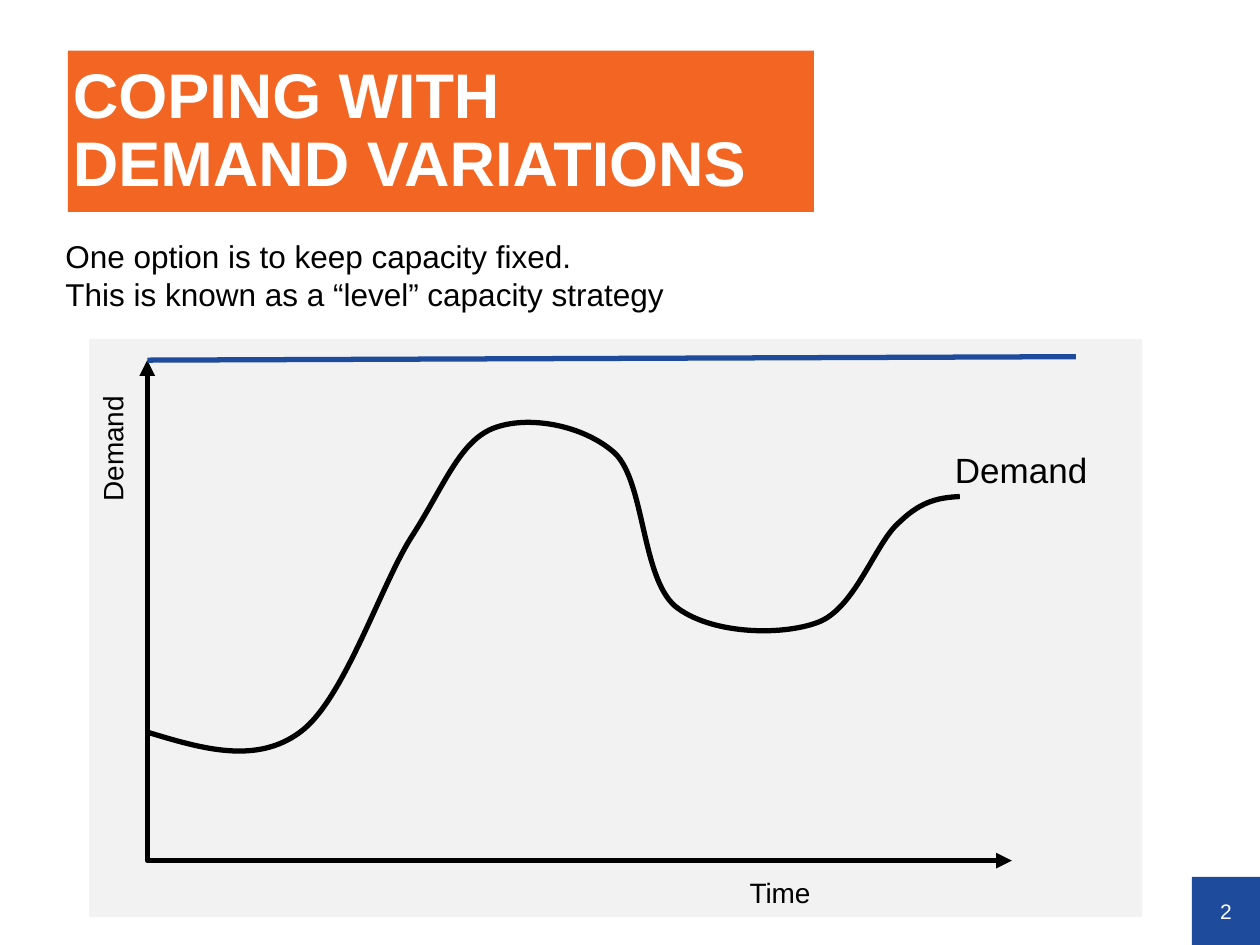
"""Build a slide on coping with demand variations by a level capacity strategy."""
from lxml.etree import SubElement
from pptx import Presentation
from pptx.dml.color import RGBColor
from pptx.enum.shapes import MSO_CONNECTOR, MSO_SHAPE
from pptx.enum.text import MSO_ANCHOR, MSO_AUTO_SIZE, PP_ALIGN
from pptx.oxml.ns import qn
from pptx.util import Cm, Pt

ORANGE = RGBColor(0xF2, 0x65, 0x22)
BLUE = RGBColor(0x1E, 0x4B, 0x9B)
GREY = RGBColor(0xF1, 0xF2, 0xF1)
BLACK = RGBColor(0, 0, 0)
WHITE = RGBColor(0xFF, 0xFF, 0xFF)

TITLE = "COPING WITH\vDEMAND VARIATIONS"
TITLE_BOX = (1.37, 1.02, 15.04, 3.25)
PAGE = "2"
PAGE_BOX = (24.03, 17.68, 1.37, 1.37)
PANEL_BOX = (1.8, 6.83, 21.23, 11.66)

LABELS = [
    ("Demand", (19, 8.92, 4.57, 1.12), 20, 0, True),
    ("Time", (14.86, 17.53, 2.64, 0.94), 16, 0, True),
    ("Demand", (0.81, 8.43, 2.92, 0.94), 16, 270, True),
    ("One option is to keep capacity fixed.\n"
     "This is known as a “level” capacity strategy",
     (1.07, 4.65, 12.7, 1.8), 18, 0, False),
]

AXES = [(2.97, 7.26), (2.97, 17.35), (20.4, 17.35)]
CAPACITY = [(2.97, 7.26), (21.69, 7.19)]
DEMAND = [
    (2.97, 14.76),
    (4.06, 15.09), (5.16, 15.42), (6.05, 14.76),
    (6.93, 14.12), (7.65, 11.86), (8.28, 10.85),
    (8.94, 9.83), (9.25, 8.92), (9.93, 8.64),
    (10.62, 8.36), (11.76, 8.56), (12.4, 9.14),
    (13, 9.73), (12.93, 11.63), (13.61, 12.22),
    (14.3, 12.78), (15.72, 12.83), (16.48, 12.55),
    (17.25, 12.27), (17.65, 10.92), (18.14, 10.52),
    (18.59, 10.08), (18.97, 10.03), (19.35, 10.01),
]


def cm(values):
    return [Cm(value) for value in values]


def write(frame, text, size, color, bold=False, **paragraph_format):
    frame.text = text
    for paragraph in frame.paragraphs:
        for key, value in paragraph_format.items():
            setattr(paragraph, key, value)
        for run in paragraph.runs:
            run.font.color.rgb = color
            for key, value in {"name": "Arial", "size": Pt(size), "bold": bold}.items():
                setattr(run.font, key, value)


def format_frame(frame, insets, **settings):
    sides = ("margin_left", "margin_top", "margin_right", "margin_bottom")
    for key, value in {**dict(zip(sides, cm(insets))), **settings}.items():
        setattr(frame, key, value)


def add_block(slide, box, color):
    block = slide.shapes.add_shape(MSO_SHAPE.RECTANGLE, *cm(box))
    block.shadow.inherit = False
    block.fill.solid()
    block.fill.fore_color.rgb = color
    block.line.fill.background()
    return block


def add_outline(slide, points):
    start, *others = [cm(point) for point in points]
    builder = slide.shapes.build_freeform(*start)
    builder.add_line_segments(others, close=False)
    outline = builder.convert_to_shape()
    outline.shadow.inherit = False
    outline.fill.background()
    outline.line.color.rgb = BLACK
    outline.line.width = Pt(3)
    return outline


def bend(outline):
    segments = list(outline._element.iter(qn("a:lnTo")))
    track = segments[0].getparent()
    for first in range(0, len(segments), 3):
        curve = SubElement(track, qn("a:cubicBezTo"))
        for segment in segments[first:first + 3]:
            curve.append(segment[0])
            track.remove(segment)


def main():
    deck = Presentation()
    deck.slide_width, deck.slide_height = cm((25.4, 19.05))
    slide = deck.slides.add_slide(deck.slide_layouts[5])

    title = slide.shapes.title
    title.left, title.top, title.width, title.height = cm(TITLE_BOX)
    title.fill.solid()
    title.fill.fore_color.rgb = ORANGE
    format_frame(title.text_frame, (0.1, 0.05, 0, 0), word_wrap=True,
                 vertical_anchor=MSO_ANCHOR.MIDDLE, auto_size=MSO_AUTO_SIZE.NONE)
    write(title.text_frame, TITLE, 36, WHITE, True,
          alignment=PP_ALIGN.LEFT, line_spacing=0.9)

    page = add_block(slide, PAGE_BOX, BLUE)
    format_frame(page.text_frame, (0, 0, 0, 0), vertical_anchor=MSO_ANCHOR.MIDDLE)
    write(page.text_frame, PAGE, 12, WHITE, alignment=PP_ALIGN.CENTER)

    add_block(slide, PANEL_BOX, GREY)
    axes = add_outline(slide, AXES)
    for end in ("a:headEnd", "a:tailEnd"):
        SubElement(axes.line._get_or_add_ln(), qn(end), type="triangle")
    bend(add_outline(slide, DEMAND))

    for text, box, size, rotation, wrap in LABELS:
        label = slide.shapes.add_textbox(*cm(box))
        label.rotation = rotation
        label.text_frame.word_wrap = wrap
        label.text_frame.auto_size = MSO_AUTO_SIZE.SHAPE_TO_FIT_TEXT
        write(label.text_frame, text, size, BLACK, alignment=PP_ALIGN.LEFT)

    start, end = CAPACITY
    capacity = slide.shapes.add_connector(MSO_CONNECTOR.STRAIGHT, *cm(start + end))
    capacity.line.color.rgb = BLUE
    capacity.line.width = Pt(3)
    SubElement(capacity._element.spPr, qn("a:effectLst"))

    deck.save("out.pptx")


if __name__ == "__main__":
    main()
